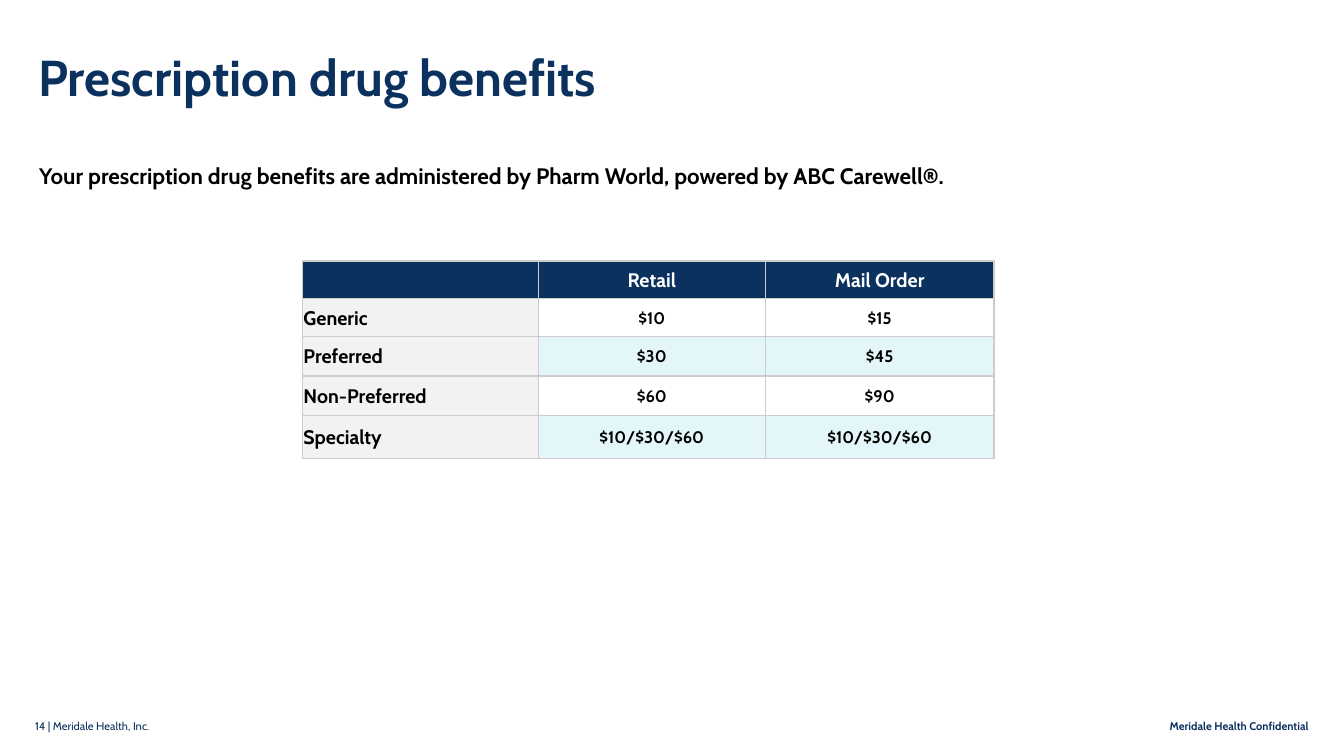
from lxml.etree import SubElement
from pptx import Presentation
from pptx.dml.color import RGBColor
from pptx.enum.text import MSO_ANCHOR as Anchor, PP_ALIGN as Align
from pptx.oxml.ns import qn
from pptx.util import Inches, Pt

FONT = "Cabin"
COLORS = {
    "navy": "0B315E",
    "black": "000000",
    "white": "FFFFFF",
    "label": "F2F2F2",
    "band": "77D8E8",
    "border": "CCCCCC",
}
COL_WIDTHS = [2.34, 2.25, 2.27]
ROW_HEIGHTS = [0.37, 0.38, 0.39, 0.39, 0.43]
COPAYS = [
    ["", "Retail", "Mail Order"],
    ["Generic", "$10", "$15"],
    ["Preferred", "$30", "$45"],
    ["Non-Preferred", "$60", "$90"],
    ["Specialty", "$10/$30/$60", "$10/$30/$60"],
]


def set_all(obj, values):
    for name, value in values.items():
        setattr(obj, name, value)


def write(tf, text, size, color, bold=True, align=Align.LEFT):
    p = tf.paragraphs[0]
    p.alignment = align
    r = p.add_run()
    r.text = text
    set_all(r.font, {"name": FONT, "size": Pt(size), "bold": bold})
    r.font.color.rgb = RGBColor.from_string(COLORS[color])
    return p


def add_title(s, box, text):
    sp = s.shapes.title
    set_all(sp, dict(zip(("left", "top", "width", "height"), map(Inches, box))))
    tf = sp.text_frame
    set_all(tf, {"margin_left": 0, "margin_top": 0, "margin_right": 0,
                 "margin_bottom": 0, "vertical_anchor": Anchor.TOP,
                 "word_wrap": True})
    write(tf, text, 36, "navy").line_spacing = 0.9


def add_text(s, box, text, size, color, **style):
    tf = s.shapes.add_textbox(*map(Inches, box)).text_frame
    tf.word_wrap = True
    write(tf, text, size, color, **style)


def add_borders(cell):
    tcPr = cell._tc.get_or_add_tcPr()
    for side in ("lnL", "lnR", "lnT", "lnB"):
        ln = SubElement(tcPr, qn(f"a:{side}"), w=str(Pt(1)))
        fill = SubElement(ln, qn("a:solidFill"))
        SubElement(fill, qn("a:srgbClr"), val=COLORS["border"])


def fill_cell(cell, color):
    cell.fill.solid()
    cell.fill.fore_color.rgb = RGBColor.from_string(COLORS[color])
    if color == "band":
        clr = cell._tc.tcPr.find(qn("a:solidFill")).find(qn("a:srgbClr"))
        SubElement(clr, qn("a:alpha"), val="20000")


def format_cell(cell, row, col, text):
    set_all(cell, {"margin_left": Inches(0.01), "margin_top": Inches(0.01),
                   "margin_right": Inches(0.01), "margin_bottom": 0,
                   "vertical_anchor": Anchor.MIDDLE})
    add_borders(cell)
    if row == 0:
        fill, size, color = "navy", 14, "white"
    elif col == 0:
        fill, size, color = "label", 14, "black"
    else:
        fill, size, color = ("white" if row % 2 else "band"), 12, "black"
    fill_cell(cell, fill)
    if text:
        align = Align.CENTER if col else Align.LEFT
        p = write(cell.text_frame, text, size, color, align=align)
        if col == 0:
            set_all(p._p.get_or_add_pPr(), {"marL": Inches(0.1), "indent": 0})


def add_copay_table(s, left, top):
    table = s.shapes.add_table(
        len(ROW_HEIGHTS), len(COL_WIDTHS), Inches(left), Inches(top),
        Inches(sum(COL_WIDTHS)), Inches(sum(ROW_HEIGHTS))).table
    for column, width in zip(table.columns, COL_WIDTHS):
        column.width = Inches(width)
    for row, height in zip(table.rows, ROW_HEIGHTS):
        row.height = Inches(height)
    for i, values in enumerate(COPAYS):
        for j, text in enumerate(values):
            format_cell(table.cell(i, j), i, j, text)


def add_footer(s, top):
    add_text(s, (0.25, top, 10.35, 0.24), "14 | Meridale Health, Inc.", 8,
             "navy", bold=False)
    add_text(s, (11.02, top, 2.06, 0.24), "Meridale Health Confidential", 8,
             "navy", align=Align.RIGHT)


def main():
    prs = Presentation()
    set_all(prs, {"slide_width": Inches(13.33), "slide_height": Inches(7.5)})
    s = prs.slides.add_slide(prs.slide_layouts[5])
    add_footer(s, 7.09)
    add_title(s, (0.38, 0.53, 12.84, 0.46), "Prescription drug benefits")
    add_text(s, (0.29, 1.56, 12.28, 0.46),
             "Your prescription drug benefits are administered by "
             "Pharm World, powered by ABC Carewell®.", 16, "black")
    add_copay_table(s, 3, 2.59)
    prs.save("out.pptx")


if __name__ == "__main__":
    main()
